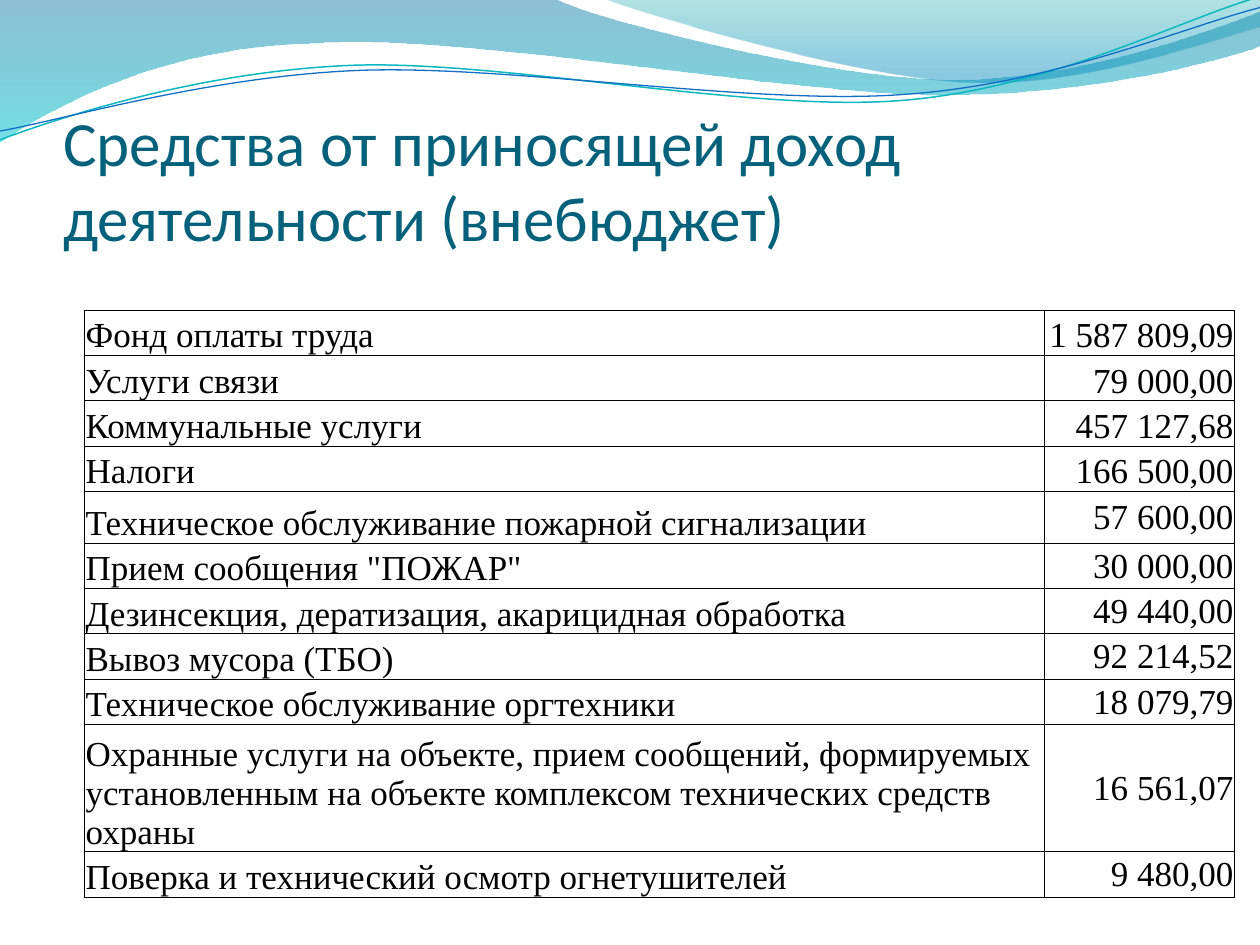
from typing import NamedTuple

from lxml.etree import SubElement
from pptx import Presentation
from pptx.dml.color import RGBColor as Color
from pptx.enum.text import MSO_ANCHOR as Anchor, PP_ALIGN as Align
from pptx.oxml.ns import qn
from pptx.util import Inches, Pt

COLUMNS, ROWS = 10, 7.5
COLORS = {
    "title": "04617B", "ink": "000000",
    "wave_top": "0074A1", "wave_bottom": "00C6CF",
    "crest_top": "00A1A9", "crest_bottom": "008BBF",
    "teal_line": "0AB8BF", "blue_line": "0F6FC6",
}
EXPENSES = [
    ("Фонд оплаты труда", "1 587 809,09"),
    ("Услуги связи", "79 000,00"),
    ("Коммунальные услуги", "457 127,68"),
    ("Налоги", "166 500,00"),
    ("Техническое обслуживание пожарной сигнализации", "57 600,00"),
    ('Прием сообщения "ПОЖАР"', "30 000,00"),
    ("Дезинсекция, дератизация, акарицидная обработка", "49 440,00"),
    ("Вывоз мусора (ТБО)", "92 214,52"),
    ("Техническое обслуживание оргтехники", "18 079,79"),
    ("Охранные услуги на объекте, прием сообщений, формируемых "
     "установленным на объекте комплексом технических средств охраны", "16 561,07"),
    ("Поверка и технический осмотр огнетушителей", "9 480,00"),
]
COLUMN_WIDTHS = [0.16, 7.62, 1.51]
ROW_HEIGHT = 0.36
TALL_ROWS = {5: 0.41, 10: 0.63}
FIRST_CENTERED_ROW = 5

WAVES = [
    ([(0, 0), (4.4, -0.01), (4.76, 0.17, 6.64, 0.63, 7.58, 0.63),
      (8.53, 0.63, 9.58, 0.26, 10, 0.09), (10.01, 0.36),
      (9.83, 0.44, 8.7, 0.76, 7.46, 0.75), (6.22, 0.75, 3.82, 0.28, 2.57, 0.34),
      (1.29, 0.36, 0.46, 0.83, -0.01, 1.13), (0, 0)],
     [("wave_top", 0, 45), ("wave_bottom", 1, 55)]),
    ([(4.79, -0.01), (5.09, 0.11, 6.82, 0.62, 7.69, 0.65),
      (8.56, 0.69, 9.61, 0.32, 10, 0.21), (10, 0), (4.79, -0.01)],
     [("crest_top", 0, 30), ("crest_bottom", 0.8, 45)]),
]
STRANDS = [
    ([(0, 1.11), (0.48, 0.93, 1.58, 0.57, 2.77, 0.52),
      (3.95, 0.47, 5.93, 0.89, 7.13, 0.8), (8.33, 0.71, 9.38, 0.15, 9.98, -0.02)],
     "teal_line", 0.85),
    ([(0, 1.04), (0.47, 0.96, 1.64, 0.61, 2.83, 0.56),
      (4.03, 0.51, 5.97, 0.84, 7.17, 0.75), (8.36, 0.67, 9.41, 0.21, 10, 0.06)],
     "blue_line", 0.75),
]


class Box(NamedTuple):
    left: float
    top: float
    width: float
    height: float

    def lengths(self):
        return [Inches(value) for value in self]


def color(name):
    return Color.from_string(COLORS[name])


def add_outline(page, box, segments, close):
    points = [(Inches(box.left + x), Inches(box.top + y))
              for segment in segments
              for x, y in zip(segment[::2], segment[1::2])]
    builder = page.shapes.build_freeform(*points[0])
    builder.add_line_segments(points[1:], close=close)
    shape = builder.convert_to_shape()
    shape.shadow.inherit = False
    bend_curves(shape, segments[1:])
    return shape


def bend_curves(shape, segments):
    lines = iter(list(shape.element.spPr.iter(qn("a:lnTo"))))
    for segment in segments:
        first = next(lines)
        if len(segment) == 6:
            first.tag = qn("a:cubicBezTo")
            for line in (next(lines), next(lines)):
                first.append(line[0])
                line.getparent().remove(line)


def add_waves(page, box):
    for segments, stops in WAVES:
        wave = add_outline(page, box, segments, True)
        wave.line.fill.background()
        wave.fill.gradient()
        wave.fill.gradient_angle = 270
        for stop, (name, position, _) in zip(wave.fill.gradient_stops, stops):
            stop.color.rgb = color(name)
            stop.position = position
        tones = wave.element.spPr.iter(qn("a:srgbClr"))
        for tone, (_, _, opacity) in zip(tones, stops):
            SubElement(tone, qn("a:alpha"), val=str(opacity * 1000))
    for segments, name, weight in STRANDS:
        strand = add_outline(page, box, segments, False)
        strand.fill.background()
        strand.line.color.rgb = color(name)
        strand.line.width = Pt(weight)


def add_title(page, box):
    frame = page.shapes.add_textbox(*box.lengths()).text_frame
    frame.word_wrap = True
    frame.vertical_anchor = Anchor.BOTTOM
    frame.margin_left = frame.margin_right = frame.margin_bottom = 0
    frame.margin_top = Inches(0.05)
    para = frame.paragraphs[0]
    para.text = "Средства от приносящей доход деятельности (внебюджет)"
    para.font.name, para.font.size = "Calibri", Pt(36)
    para.font.color.rgb = color("title")


def set_borders(cell, sides):
    properties = cell._tc.get_or_add_tcPr()
    for index, side in enumerate("LRTB"):
        shown = side in sides
        border = properties.makeelement(qn(f"a:ln{side}"), w=str(Pt(0.5) if shown else 0))
        properties.insert(index, border)
        if shown:
            fill = SubElement(border, qn("a:solidFill"))
            SubElement(fill, qn("a:srgbClr"), val=COLORS["ink"])
        else:
            SubElement(border, qn("a:noFill"))


def fill_cell(cell, text, align, anchor, sides):
    cell.fill.background()
    cell.margin_left = cell.margin_right = cell.margin_top = Inches(0.01)
    cell.margin_bottom = 0
    cell.vertical_anchor = anchor
    para = cell.text_frame.paragraphs[0]
    para.text = text
    para.alignment = align
    para.font.name, para.font.size = "Times New Roman", Pt(20)
    para.font.color.rgb = color("ink")
    set_borders(cell, sides)


def add_expenses(page, box):
    rows = [("", "", "")] + [("", *expense) for expense in EXPENSES]
    frame = page.shapes.add_table(len(rows), len(COLUMN_WIDTHS), *box.lengths())
    table = frame.table
    table.first_row = table.horz_banding = False
    for column, width in zip(table.columns, COLUMN_WIDTHS):
        column.width = Inches(width)
    for r, texts in enumerate(rows):
        table.rows[r].height = Inches(TALL_ROWS.get(r, ROW_HEIGHT))
        for c, text in enumerate(texts):
            amount = c == 2
            centered = amount and r >= FIRST_CENTERED_ROW
            if r and c:
                sides = "LRTB"
            elif r:
                sides = "R"
            else:
                sides = "B" if c else ""
            fill_cell(table.cell(r, c), text, Align.RIGHT if amount else Align.LEFT,
                      Anchor.MIDDLE if centered else Anchor.BOTTOM, sides)
    frame.height = Inches(box.height)


def main():
    deck = Presentation()
    deck.slide_width, deck.slide_height = Inches(COLUMNS), Inches(ROWS)
    page = deck.slides.add_slide(deck.slide_layouts[6])
    add_waves(page, Box(0, 0, COLUMNS, 1.14))
    add_title(page, Box(0.5, 0.77, 9.08, 1.25))
    add_expenses(page, Box(0.51, 2.1, 9.29, 5.03))
    deck.save("out.pptx")


if __name__ == "__main__":
    main()
